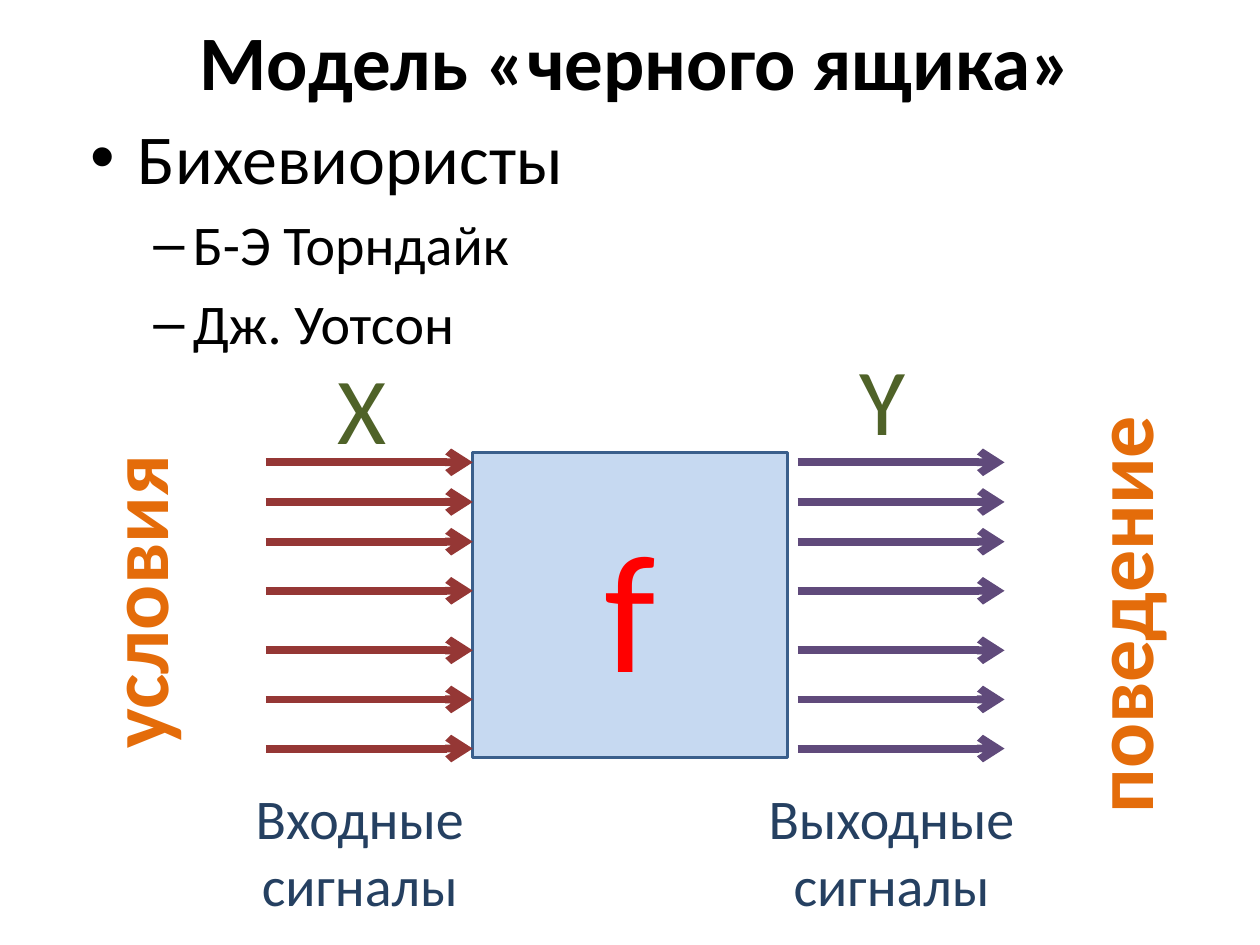
from pptx import Presentation
from pptx.dml.color import RGBColor as RGB
from pptx.enum.shapes import MSO_CONNECTOR as Link, MSO_SHAPE as Form
from pptx.enum.text import MSO_ANCHOR as Anchor, MSO_AUTO_SIZE as Fit, PP_ALIGN as Align
from pptx.oxml.ns import qn
from pptx.util import Cm, Pt
from lxml.etree import SubElement as Sub

HUES = {
    "black": "000000", "box": "C6D9F1", "edge": "3A5F8C", "f": "FF0000",
    "in": "953735", "out": "604A7B", "var": "4F6228", "note": "254061",
    "side": "E46C0A",
}


def hue(name):
    return RGB.from_string(HUES[name])


def write(para, text, size, color, bold=False):
    run = para.add_run()
    run.text = text
    run.font.name = "Calibri"
    run.font.size = Pt(size)
    run.font.bold = bold
    run.font.color.rgb = hue(color)


deck = Presentation()
deck.slide_width, deck.slide_height = Cm(25.4), Cm(19.05)
slide = deck.slides.add_slide(deck.slide_layouts[1])

title, body = slide.placeholders
for holder, x, y, w, h in [(title, 1.4, 0, 22.86, 2.39), (body, 1.57, 2.18, 22.86, 4.88)]:
    holder.left, holder.top, holder.width, holder.height = Cm(x), Cm(y), Cm(w), Cm(h)
    holder.text_frame.auto_size = Fit.NONE
write(title.text_frame.paragraphs[0], "Модель «черного ящика»", 44, "black", True)

items = [("Бихевиористы", 0, 40), ("Б-Э Торндайк", 1, 32), ("Дж. Уотсон", 1, 32)]
for i, (text, level, size) in enumerate(items):
    frame = body.text_frame
    para = frame.add_paragraph() if i else frame.paragraphs[0]
    para.level = level
    write(para, text, size, "black")

box = slide.shapes.add_shape(Form.RECTANGLE, Cm(9.53), Cm(9.12), Cm(6.35), Cm(6.15))
box.shadow.inherit = False
box.fill.solid()
box.fill.fore_color.rgb = hue("box")
box.line.color.rgb = hue("edge")
box.line.width = Pt(2)
box.text_frame.vertical_anchor = Anchor.MIDDLE
para = box.text_frame.paragraphs[0]
para.alignment = Align.CENTER
write(para, "f", 96, "f")

rows = [9.32, 10.12, 10.92, 11.91, 13.11, 14.1, 15.09]
for color, x in [("in", 5.36), ("out", 16.08)]:
    group = slide.shapes.add_group_shape()
    for y in rows:
        arrow = group.shapes.add_connector(Link.STRAIGHT, Cm(x), Cm(y), Cm(x + 4.17), Cm(y))
        arrow.line.color.rgb = hue(color)
        arrow.line.width = Pt(4.5)
        Sub(arrow.line._get_or_add_ln(), qn("a:tailEnd"), type="arrow")
        Sub(arrow.element.spPr, qn("a:effectLst"))

labels = [
    ("X", 6.55, 6.93, 1.6, 2.57, 54, "var"),
    ("Y", 17.07, 6.76, 1.6, 2.57, 54, "var"),
    ("Входные сигналы", 4.37, 15.67, 5.77, 3, 32, "note"),
    ("Выходные сигналы", 15.09, 15.67, 5.77, 3, 32, "note"),
    ("условия", 1.57, 8.74, 2.57, 6.78, 48, "side"),
    ("поведение", 21.44, 8.13, 2.57, 8.53, 48, "side"),
]
for text, x, y, w, h, size, color in labels:
    label = slide.shapes.add_textbox(Cm(x), Cm(y), Cm(w), Cm(h))
    frame = label.text_frame
    frame.word_wrap = True
    frame.auto_size = Fit.SHAPE_TO_FIT_TEXT
    para = frame.paragraphs[0]
    para.alignment = Align.LEFT if color == "var" else Align.CENTER
    if color == "side":
        label.element.txBody.bodyPr.set("vert", "vert270")
    write(para, text, size, color, color == "side")

deck.save("out.pptx")
